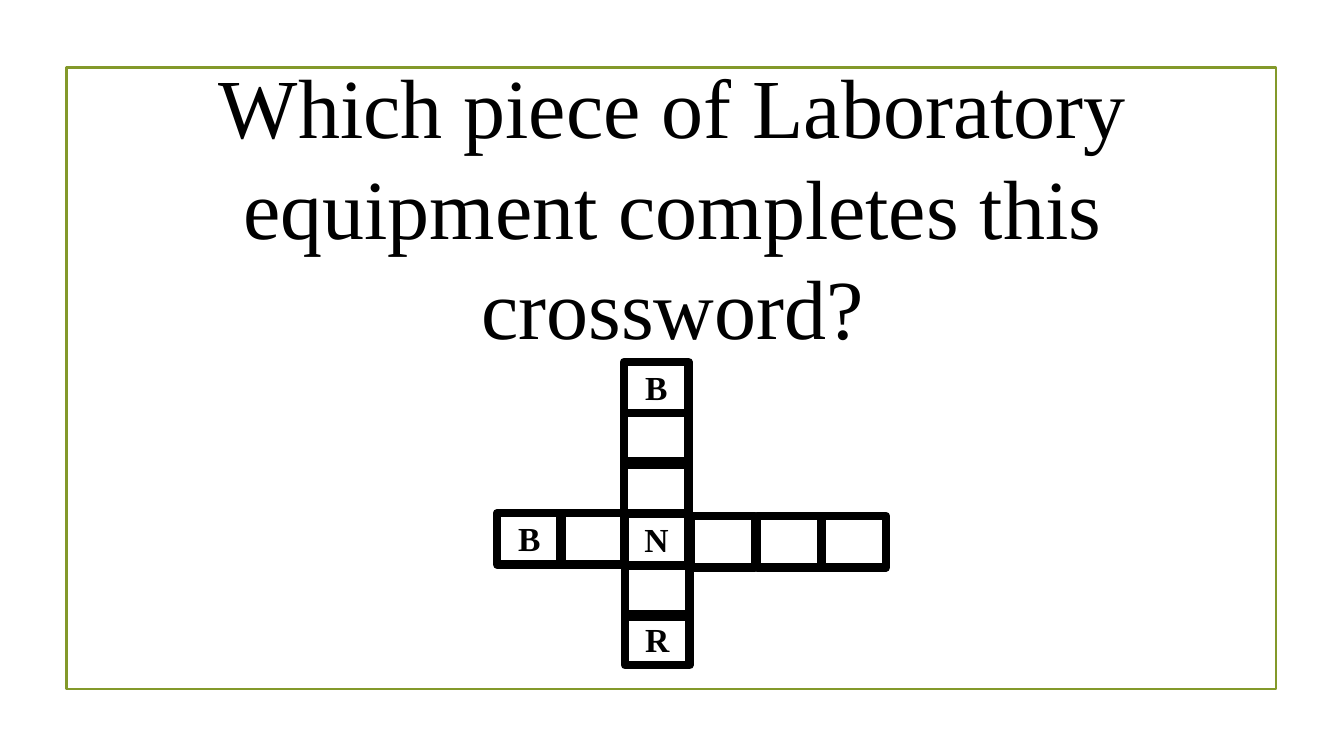
from lxml import etree
from pptx import Presentation
from pptx.dml.color import RGBColor
from pptx.enum.shapes import MSO_SHAPE
from pptx.enum.text import MSO_ANCHOR, PP_ALIGN
from pptx.oxml.ns import qn
from pptx.util import Inches, Pt

RECTANGLE = MSO_SHAPE.RECTANGLE
MIDDLE = MSO_ANCHOR.MIDDLE
CENTER = PP_ALIGN.CENTER
BLACK = "000000"
OLIVE = "83992A"
CELL_WIDTH, CELL_HEIGHT = 0.64, 0.51


def add_outline(left, top, width, height, color, line_width):
    """Add an unfilled rectangle with a coloured border."""
    shape = slide.shapes.add_shape(
        RECTANGLE, Inches(left), Inches(top), Inches(width), Inches(height))
    shape.shadow.inherit = False
    shape.fill.background()
    shape.line.color.rgb = RGBColor.from_string(color)
    shape.line.width = Pt(line_width)
    return shape


def write_text(text_frame, text, size, bold=False):
    paragraph = text_frame.paragraphs[0]
    paragraph.alignment = CENTER
    run = paragraph.add_run()
    run.text = text
    run.font.name = "Times New Roman"
    run.font.size = Pt(size)
    run.font.bold = bold
    run.font.color.rgb = RGBColor.from_string(BLACK)


presentation = Presentation()
presentation.slide_width = Inches(13.33)
presentation.slide_height = Inches(7.5)
slide = presentation.slides.add_slide(presentation.slide_layouts[6])

add_outline(0.66, 0.67, 12, 6.17, OLIVE, 1.5)

question = slide.shapes.add_textbox(
    Inches(0.96), Inches(0.49), Inches(11.42), Inches(3.13))
question.text_frame.word_wrap = True
write_text(
    question.text_frame,
    "Which piece of Laboratory equipment completes this crossword?", 60)

# Crossword cells: left, top, letter
down_cells = [
    (6.19, 3.59, "B"), (6.19, 4.1, ""), (6.19, 4.58, ""),
    (6.19, 5.1, "N"), (6.2, 5.61, ""), (6.2, 6.09, "R"),
]
across_cells = [
    (4.93, 5.09, "B"), (5.56, 5.09, ""),
    (6.85, 5.12, ""), (7.51, 5.12, ""), (8.15, 5.12, ""),
]
for left, top, letter in down_cells + across_cells:
    cell = add_outline(left, top, CELL_WIDTH, CELL_HEIGHT, BLACK, 6)
    etree.SubElement(cell.line._get_or_add_ln(), qn("a:round"))
    if letter:
        text_frame = cell.text_frame
        text_frame.vertical_anchor = MIDDLE
        text_frame.margin_left = text_frame.margin_right = 0
        text_frame.margin_top = 0
        text_frame.margin_bottom = Inches(0.02)
        write_text(text_frame, letter, 24, bold=True)

presentation.save("out.pptx")
